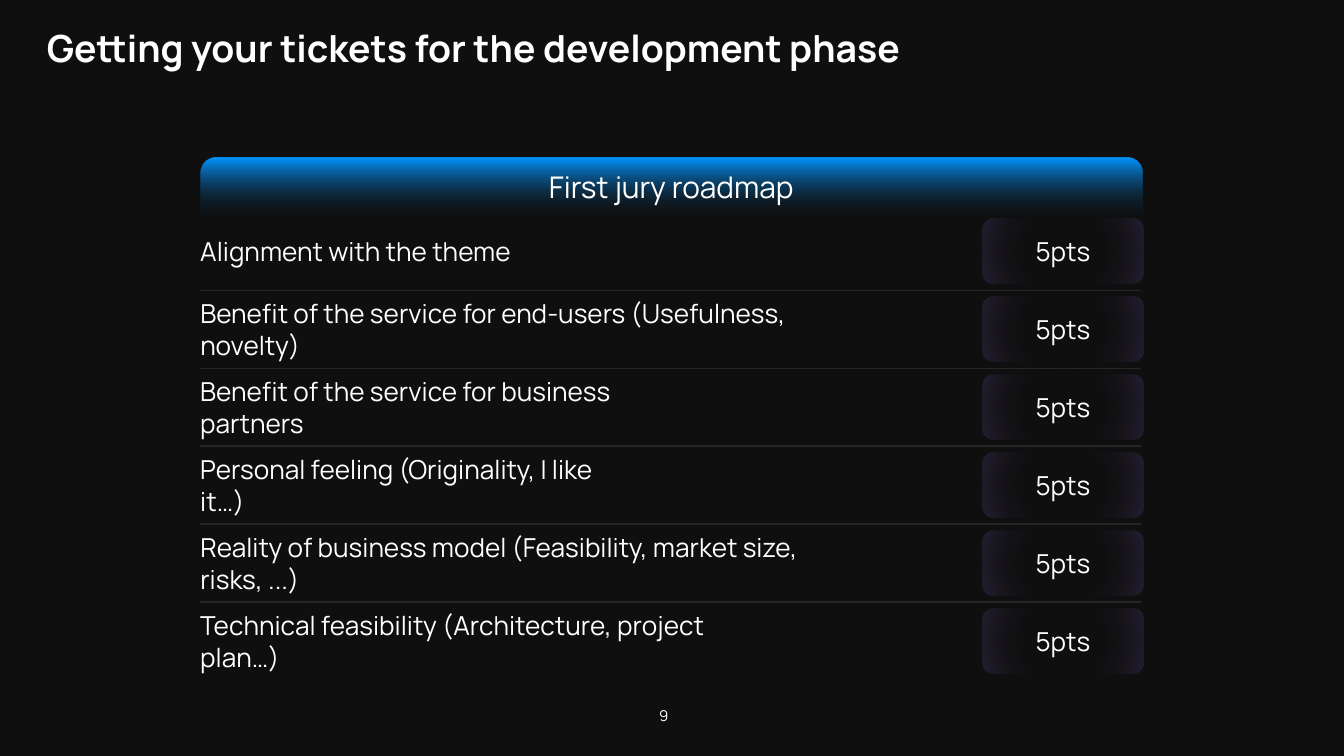
from lxml import etree
from pptx import Presentation, util as u
from pptx.dml.color import RGBColor
from pptx.enum import shapes, text
from pptx.oxml.ns import qn

FONT, WHITE, DARK, BLUE, VIOLET, RULE = (
    "Manrope", "FFFFFF", "0F0F0F", "0596FF", "A375FF", "262626")
WIDTH = 10
HEIGHT = WIDTH * 9 / 16

# Grid of the roadmap: equal rows, criteria on the left and points on the right
LEFT, TABLE_W = 1.49, 7
FIRST_ROW, ROW_H = 1.58, 0.58
POINTS_X, POINTS_W, POINTS_H = 7.31, 1.2, 0.48

# Criterion and the width at which it wraps
CRITERIA = [
    ("Alignment with the theme", 2.4),
    ("Benefit of the service for end-users (Usefulness, novelty)", 5.09),
    ("Benefit of the service for business partners", 3.83),
    ("Personal feeling (Originality, I like it…)", 3.24),
    ("Reality of business model (Feasibility, market size, risks, ...)", 5.15),
    ("Technical feasibility (Architecture, project plan…)", 4.27),
]


def color(value):
    return RGBColor.from_string(value)


def inches(*lengths):
    return [u.Inches(length) for length in lengths]


def write(sp, words, size, align="LEFT", anchor="TOP", bold=False, inset=None):
    tf = sp.text_frame
    tf.word_wrap = True
    tf.vertical_anchor = getattr(text.MSO_ANCHOR, anchor)
    if inset is not None:
        for side in ("left", "top", "right", "bottom"):
            setattr(tf, f"margin_{side}", u.Inches(inset))
    p = tf.paragraphs[0]
    p.alignment = getattr(text.PP_ALIGN, align)
    r = p.add_run()
    r.text = words
    for name, value in {"name": FONT, "size": u.Pt(size), "bold": bold}.items():
        setattr(r.font, name, value)
    r.font.color.rgb = color(WHITE)


def add_label(s, box, words, size, **format_values):
    write(s.shapes.add_textbox(*inches(*box)), words, size, **format_values)


def add_card(s, box, stops, direction):
    """Rounded card with a gradient; stops are (position %, colour, opacity %)."""
    sp = s.shapes.add_shape(shapes.MSO_SHAPE.ROUNDED_RECTANGLE, *inches(*box))
    sp.shadow.inherit = False
    sp.line.fill.background()
    sp.fill.gradient()
    grad = sp._element.spPr.find(qn("a:gradFill"))
    for child in list(grad):
        grad.remove(child)
    stop_list = etree.SubElement(grad, qn("a:gsLst"))
    for position, value, opacity in stops:
        stop = etree.SubElement(stop_list, qn("a:gs"), pos=str(position * 1000))
        rgb = etree.SubElement(stop, qn("a:srgbClr"), val=value)
        etree.SubElement(rgb, qn("a:alpha"), val=str(opacity * 1000))
    if direction == "down":
        etree.SubElement(grad, qn("a:lin"), ang="5400000", scaled="0")
    else:
        shade = etree.SubElement(grad, qn("a:path"), path="circle")
        etree.SubElement(shade, qn("a:fillToRect"),
                         {side: "50000" for side in "ltrb"})
    return sp


def add_rule(group, y):
    line = group.shapes.add_connector(
        shapes.MSO_CONNECTOR.STRAIGHT, *inches(LEFT, y, LEFT + TABLE_W, y))
    line.line.color.rgb = color(RULE)
    line.line.width = u.Pt(0.75)
    etree.SubElement(line._element.spPr, qn("a:effectLst"))


def add_criterion(s, row, words, width):
    y = FIRST_ROW + row * ROW_H
    add_label(s, (LEFT, y + 0.17, width, 0.24), words, 14,
              anchor="MIDDLE", inset=0)
    points = add_card(s, (POINTS_X, y + 0.05, POINTS_W, POINTS_H),
                      [(36, DARK, 0), (100, VIOLET, 15)], "outward")
    write(points, "5pts", 14, align="CENTER", anchor="MIDDLE")


def main():
    prs = Presentation()
    prs.slide_width, prs.slide_height = inches(WIDTH, HEIGHT)
    s = prs.slides.add_slide(prs.slide_layouts[6])
    s.background.fill.solid()
    s.background.fill.fore_color.rgb = color(DARK)

    # Title and page number
    add_label(s, (0.25, 0.14, 9.38, 0.8),
              "Getting your tickets for the development phase", 20, bold=True)
    add_label(s, (4.86, 5.26, 0.16, 0.13), "9", 8,
              align="CENTER", anchor="MIDDLE", inset=0)

    # Roadmap header
    header = add_card(s, (LEFT, 1.17, TABLE_W + 0.01, 0.68),
                      [(0, BLUE, 100), (71, DARK, 0)], "down")
    write(header, "First jury roadmap", 16, align="CENTER")

    # Criteria with their points
    for row, (words, width) in enumerate(CRITERIA):
        add_criterion(s, row, words, width)

    # Rules between the rows
    rules = s.shapes.add_group_shape()
    for row in range(1, len(CRITERIA)):
        add_rule(rules, FIRST_ROW + row * ROW_H)

    prs.save("out.pptx")


if __name__ == "__main__":
    main()
